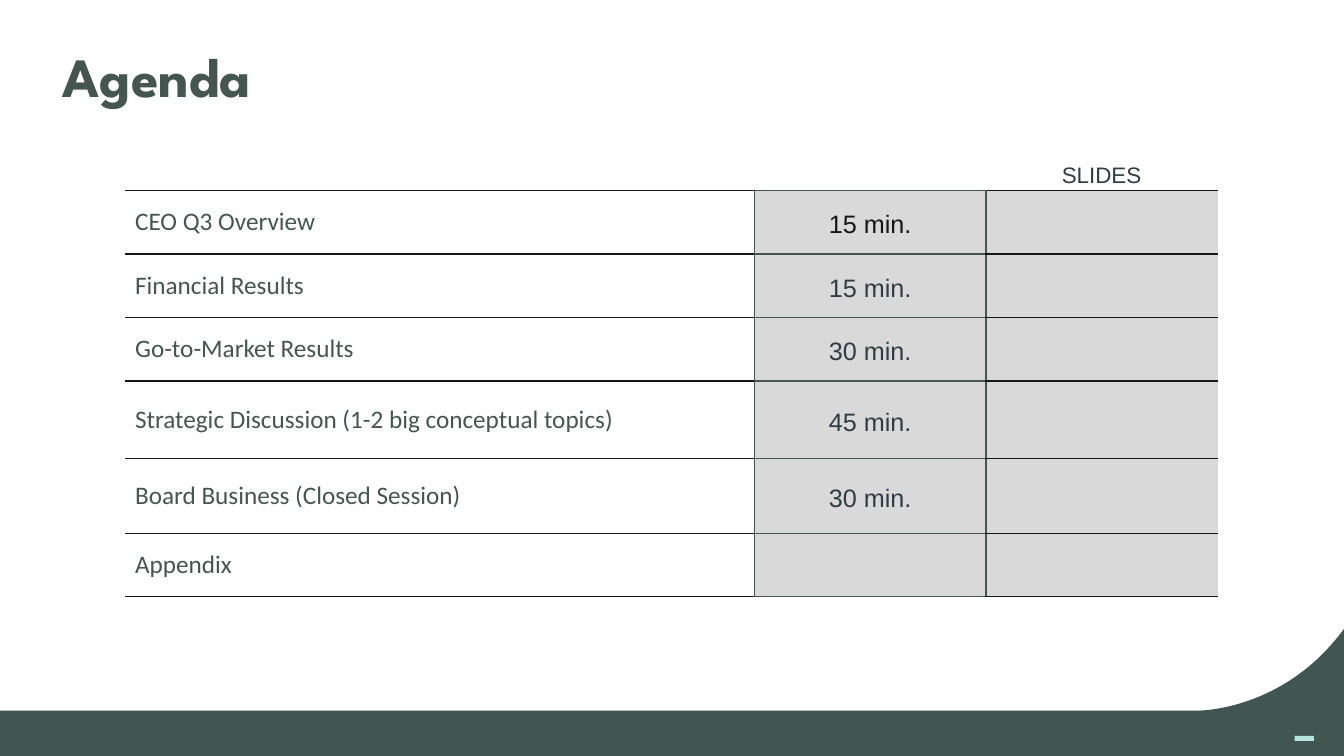
from lxml.etree import SubElement
from pptx import Presentation
from pptx.dml.color import RGBColor
from pptx.enum.shapes import MSO_SHAPE
from pptx.enum.text import MSO_ANCHOR, PP_ALIGN
from pptx.oxml.ns import qn
from pptx.util import Inches, Pt

COLORS = {
    "band": "415651",
    "mint": "B5E5DC",
    "green": "455550",
    "slate": "313C42",
    "black": "171616",
    "gray": "D9D9D9",
}

AGENDA = [
    ("CEO Q3 Overview", "15 min.", 0.63),
    ("Financial Results", "15 min.", 0.63),
    ("Go-to-Market Results", "30 min.", 0.63),
    ("Strategic Discussion (1-2 big conceptual topics)", "45 min.", 0.77),
    ("Board Business (Closed Session)", "30 min.", 0.74),
    ("Appendix", "", 0.63),
]
COLUMN_WIDTHS = (6.24, 2.3, 2.3)
TOPIC_EDGES = {"R": "green", "T": "black", "B": "black"}
TIME_EDGES = dict.fromkeys("LRTB", "green")
SLIDES_EDGES = {"L": "green", "T": "black", "B": "black"}


def color(name):
    return RGBColor.from_string(COLORS[name])


def write(frame, text, size, font, ink, bold=False, align=PP_ALIGN.LEFT, spacing=1.0):
    paragraph = frame.paragraphs[0]
    paragraph.alignment = align
    paragraph.line_spacing = spacing
    run = paragraph.add_run()
    run.text = text
    run.font.size = Pt(size)
    run.font.name = font
    run.font.bold = bold
    run.font.color.rgb = color(ink)


def paint(shape, name):
    shape.shadow.inherit = False
    shape.fill.solid()
    shape.fill.fore_color.rgb = color(name)
    shape.line.fill.background()


def curve_points(start, control_1, control_2, end, steps=40):
    for step in range(1, steps + 1):
        t = step / steps
        weights = ((1 - t) ** 3, 3 * t * (1 - t) ** 2, 3 * t * t * (1 - t), t ** 3)
        yield tuple(
            Inches(sum(w * v for w, v in zip(weights, axis)))
            for axis in zip(start, control_1, control_2, end)
        )


def add_footer(slide):
    bend = (11.88, 7.05)
    corners = [(0, 7.5), (0, 7.05), bend]
    outline = slide.shapes.build_freeform(Inches(13.33), Inches(7.5), scale=1.0)
    outline.add_line_segments([(Inches(x), Inches(y)) for x, y in corners], close=False)
    outline.add_line_segments(curve_points(bend, bend, (12.73, 7.06), (13.33, 6.24)))
    paint(outline.convert_to_shape(), "band")
    mark = slide.shapes.add_shape(
        MSO_SHAPE.RECTANGLE, Inches(12.84), Inches(7.3), Inches(0.19), Inches(0.05)
    )
    paint(mark, "mint")


def add_title(slide, text):
    title = slide.shapes.title
    title.left, title.top = Inches(0.62), Inches(0.5)
    title.width, title.height = Inches(12.09), Inches(0.57)
    frame = title.text_frame
    frame.margin_left = 0
    frame.vertical_anchor = MSO_ANCHOR.MIDDLE
    write(frame, text, 39.6, "League Spartan", "green", bold=True, spacing=0.9)


def style_cell(cell, edges, fill=None):
    cell.vertical_anchor = MSO_ANCHOR.MIDDLE
    properties = cell._tc.get_or_add_tcPr()
    for side in "LRTB":
        line = SubElement(properties, qn(f"a:ln{side}"), w=str(Pt(1)))
        if side in edges:
            solid = SubElement(line, qn("a:solidFill"))
            SubElement(solid, qn("a:srgbClr"), val=COLORS[edges[side]])
        else:
            SubElement(line, qn("a:noFill"))
    if fill:
        cell.fill.solid()
        cell.fill.fore_color.rgb = color(fill)
    else:
        cell.fill.background()


def add_agenda(slide):
    height = sum(row_height for _, _, row_height in AGENDA)
    table = slide.shapes.add_table(
        len(AGENDA), len(COLUMN_WIDTHS), Inches(1.24), Inches(1.89),
        Inches(sum(COLUMN_WIDTHS)), Inches(height),
    ).table
    table.first_row = False
    table.horz_banding = False
    for column, width in zip(table.columns, COLUMN_WIDTHS):
        column.width = Inches(width)
    for index, (topic, minutes, row_height) in enumerate(AGENDA):
        row = table.rows[index]
        row.height = Inches(row_height)
        topic_cell, time_cell, slides_cell = row.cells
        style_cell(topic_cell, TOPIC_EDGES)
        style_cell(time_cell, TIME_EDGES, "gray")
        style_cell(slides_cell, SLIDES_EDGES, "gray")
        topic_cell.margin_top = topic_cell.margin_bottom = Inches(0.1)
        write(topic_cell.text_frame, topic, 18, "Calibri", "green")
        if minutes:
            ink = "slate" if index else "black"
            write(time_cell.text_frame, minutes, 18, "Arial", ink,
                  align=PP_ALIGN.CENTER, spacing=1.2)


def add_column_label(slide, text):
    label = slide.shapes.add_textbox(Inches(9.84), Inches(1.57), Inches(2.17), Inches(0.3))
    label.text_frame.word_wrap = True
    write(label.text_frame, text, 16, "Arial", "slate", align=PP_ALIGN.CENTER, spacing=0.95)


def main():
    deck = Presentation()
    deck.slide_width, deck.slide_height = Inches(13.33), Inches(7.5)
    slide = deck.slides.add_slide(deck.slide_layouts[5])
    add_footer(slide)
    add_title(slide, "Agenda")
    add_agenda(slide)
    add_column_label(slide, "SLIDES")
    deck.save("out.pptx")


if __name__ == "__main__":
    main()
